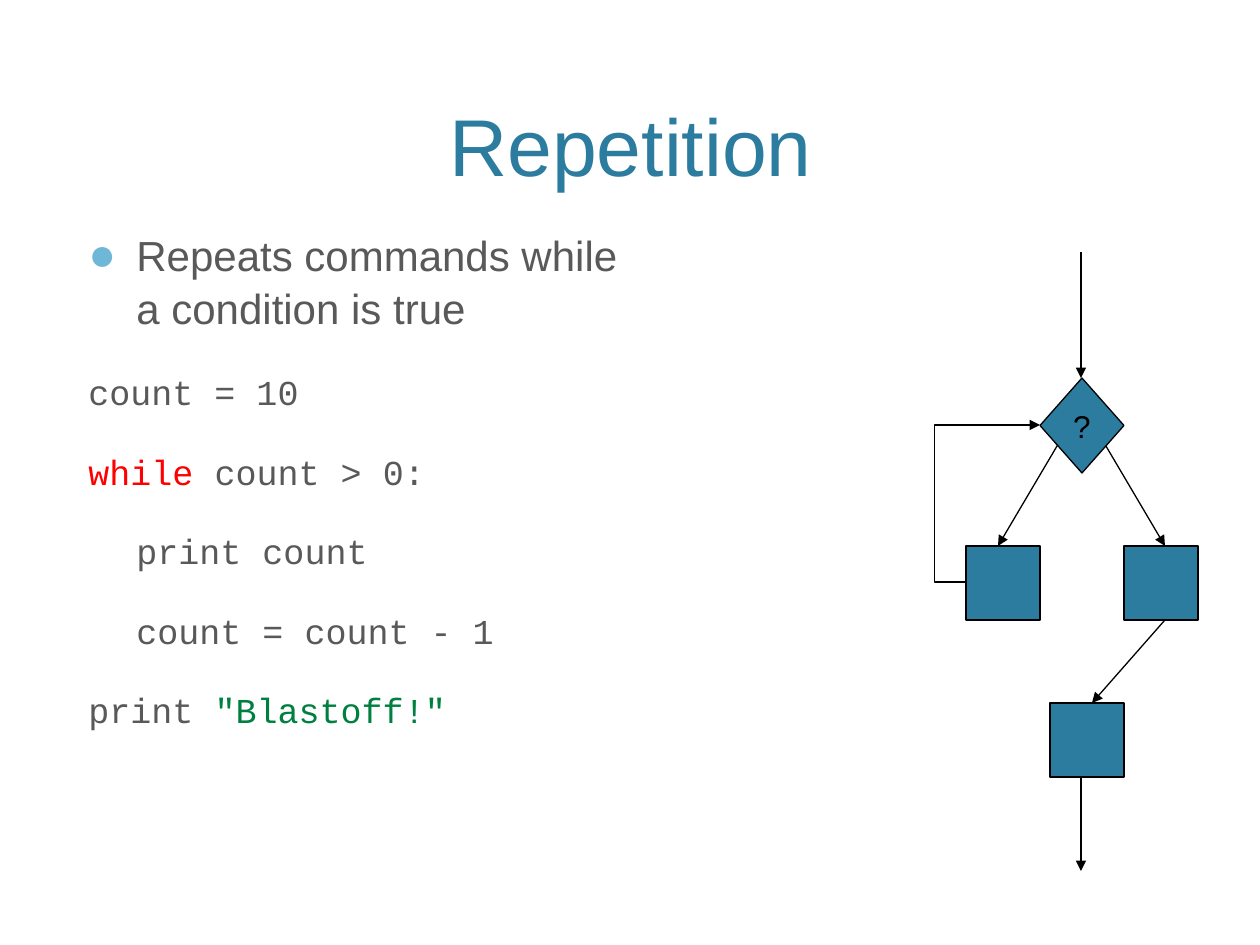
import pptx
import pptx.dml.color
import pptx.enum.shapes
import pptx.enum.text
import pptx.oxml
import pptx.oxml.ns
import pptx.util

EMU_PER_PX = 914400 / 126
HANG = 48
COLORS = {
    "accent": "2C7C9F",
    "bullet": "6FB7D7",
    "text": "595959",
    "keyword": "FF0000",
    "string": "008040",
    "black": "000000",
}
SHAPE = pptx.enum.shapes.MSO_SHAPE
CONNECTOR = pptx.enum.shapes.MSO_CONNECTOR
ALIGN = pptx.enum.text.PP_ALIGN
ANCHOR = pptx.enum.text.MSO_ANCHOR

# Each code line: indented or not, then (text, colour) pieces
CODE = [
    (False, [("count = 10", "text")]),
    (False, [("while", "keyword"), (" count > 0:", "text")]),
    (True, [("print count", "text")]),
    (True, [("count = count - 1", "text")]),
    (False, [("print ", "text"), ('"Blastoff!"', "string")]),
]
BOX_SIZE = 74
BOXES = [(966, 546), (1124, 546), (1050, 703)]
ARROWS = [
    ((1081, 252), (1081, 378)),
    ((1060, 441), (998, 546)),
    ((1103, 441), (1165, 546)),
    ((1165, 620), (1092, 703)),
    ((1081, 777), (1081, 871)),
]


def px(*values):
    return [pptx.util.Emu(round(v * EMU_PER_PX)) for v in values]


def rgb(name):
    return pptx.dml.color.RGBColor.from_string(COLORS[name])


def add_xml(parent, tag, **attributes):
    child = pptx.oxml.parse_xml(f"<{tag} {pptx.oxml.ns.nsdecls('a')}/>")
    for key, value in attributes.items():
        child.set(key, value)
    parent.append(child)
    return child


def add_run(p, text, size, font, color):
    """Add text to p; a vertical tab in it becomes a line break."""
    for i, line in enumerate(text.split("\v")):
        if i:
            p.add_line_break()
        r = p.add_run()
        r.text = line
        r.font.size = pptx.util.Pt(size)
        r.font.name = font
        r.font.color.rgb = rgb(color)


def add_text_box(s, box, anchor):
    tf = s.shapes.add_textbox(*px(*box)).text_frame
    tf.word_wrap = True
    tf.vertical_anchor = anchor
    return tf


def add_title(s, text):
    tf = add_text_box(s, (76, 15, 1109, 184), ANCHOR.BOTTOM)
    p = tf.paragraphs[0]
    p.alignment = ALIGN.CENTER
    add_run(p, text, 46, "Arial", "accent")


def set_spacing(p, indent):
    p.space_before = pptx.util.Pt(20)
    p.line_spacing = 1.06
    margin, first = px(HANG, indent)
    p_pr = p._p.get_or_add_pPr()
    p_pr.set("marL", str(margin))
    p_pr.set("indent", str(first))
    return p_pr


def add_body(s, bullet_text):
    tf = add_text_box(s, (76, 220, 1109, 599), ANCHOR.TOP)
    p = tf.paragraphs[0]
    p_pr = set_spacing(p, -HANG)
    bullet_color = add_xml(p_pr, "a:buClr")
    add_xml(bullet_color, "a:srgbClr", val=COLORS["bullet"])
    add_xml(p_pr, "a:buSzPct", val="110000")
    add_xml(p_pr, "a:buFont", typeface="Arial")
    add_xml(p_pr, "a:buChar", char="●")
    add_run(p, bullet_text, 24, "Arial", "text")
    for indented, pieces in CODE:
        p = tf.add_paragraph()
        set_spacing(p, 0 if indented else -HANG)
        for text, color in pieces:
            add_run(p, text, 20, "Courier New", color)


def set_line(line):
    line.color.rgb = rgb("black")
    line.width = pptx.util.Pt(0.75)


def add_node(s, kind, box):
    sp = s.shapes.add_shape(kind, *px(*box))
    sp.shadow.inherit = False
    sp.fill.solid()
    sp.fill.fore_color.rgb = rgb("accent")
    set_line(sp.line)
    return sp


def add_arrow(s, start, end, kind=CONNECTOR.STRAIGHT):
    arrow = s.shapes.add_connector(kind, *px(*start, *end))
    set_line(arrow.line)
    add_xml(arrow.line._get_or_add_ln(), "a:tailEnd", type="triangle")
    add_xml(arrow._element.spPr, "a:effectLst")
    return arrow


def add_loop_arrow(s):
    """Lead from the left box back to the condition, bending out to the left."""
    arrow = add_arrow(s, (966, 582), (1040, 425), CONNECTOR.ELBOW)
    guides = arrow._element.spPr.prstGeom.get_or_add_avLst()
    add_xml(guides, "a:gd", name="adj1", fmla="val -42900")


def add_condition(s):
    sp = add_node(s, SHAPE.DIAMOND, (1040, 378, 84, 95))
    tf = sp.text_frame
    tf.word_wrap = False
    tf.vertical_anchor = ANCHOR.MIDDLE
    p = tf.paragraphs[0]
    p.alignment = ALIGN.CENTER
    add_run(p, "?", 18, "Arial", "black")


def main():
    prs = pptx.Presentation()
    prs.slide_width, prs.slide_height = px(1260, 945)
    s = prs.slides.add_slide(prs.slide_layouts[6])
    add_title(s, "Repetition")
    add_body(s, "Repeats commands while\va condition is true")
    for left, top in BOXES:
        add_node(s, SHAPE.RECTANGLE, (left, top, BOX_SIZE, BOX_SIZE))
    for start, end in ARROWS:
        add_arrow(s, start, end)
    add_loop_arrow(s)
    add_condition(s)
    prs.save("out.pptx")


if __name__ == "__main__":
    main()
